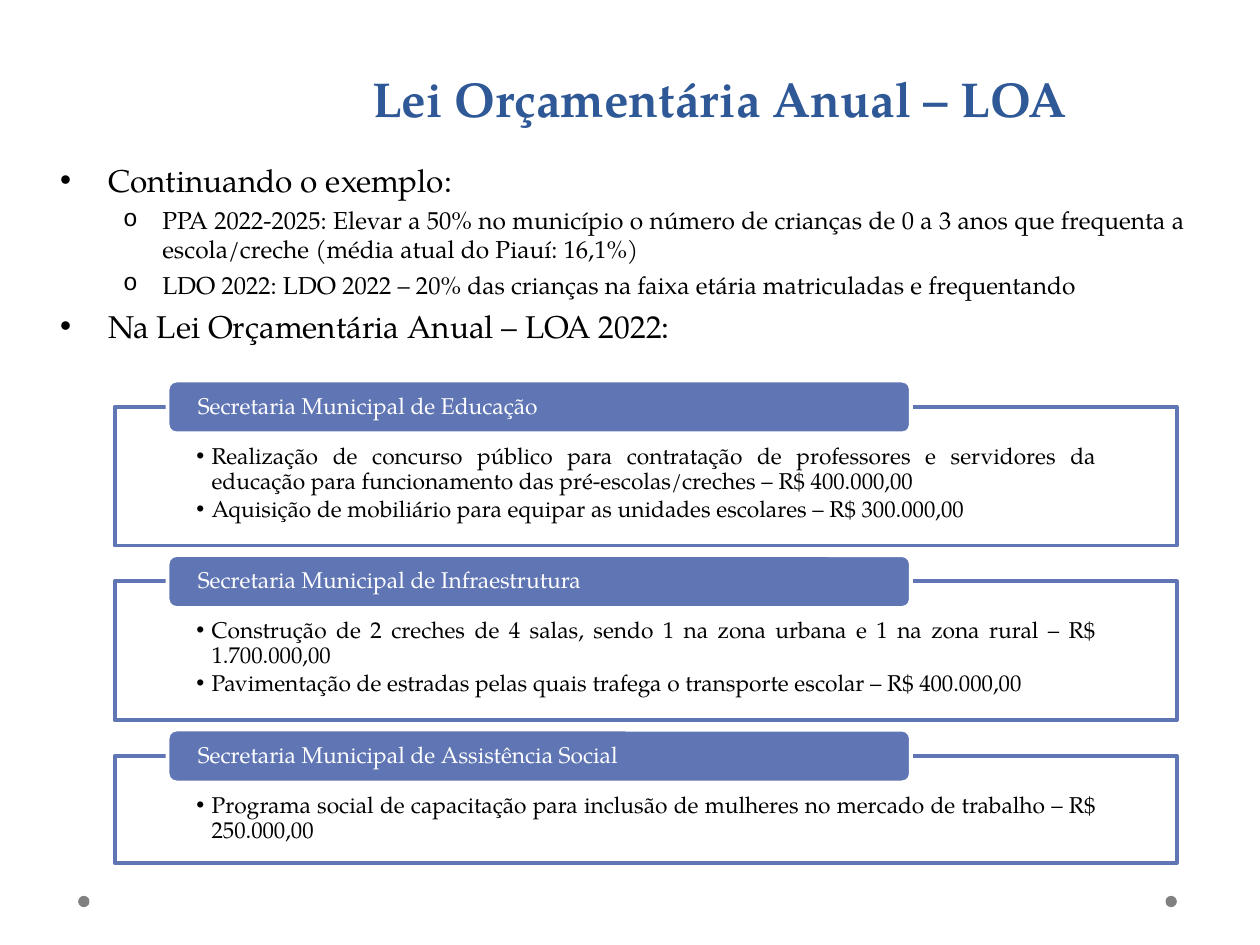
from dataclasses import dataclass

from lxml import etree
from pptx import Presentation
from pptx.dml.color import RGBColor
from pptx.enum.shapes import MSO_SHAPE
from pptx.enum.text import MSO_ANCHOR, PP_ALIGN
from pptx.oxml.ns import qn
from pptx.util import Inches, Pt

RECTANGLE, ROUNDED, OVAL = MSO_SHAPE.RECTANGLE, MSO_SHAPE.ROUNDED_RECTANGLE, MSO_SHAPE.OVAL
TOP, MIDDLE, BOTTOM = MSO_ANCHOR.TOP, MSO_ANCHOR.MIDDLE, MSO_ANCHOR.BOTTOM
CENTER, JUSTIFY = PP_ALIGN.CENTER, PP_ALIGN.JUSTIFY

NAVY = RGBColor(0x2F, 0x58, 0x97)
BLUE = RGBColor(0x60, 0x76, 0xB4)
GRAY = RGBColor(0x80, 0x80, 0x80)
BLACK = RGBColor(0, 0, 0)
WHITE = RGBColor(0xFF, 0xFF, 0xFF)
FONT = "TeX Gyre Pagella"

# The slide is a grid of 100 columns and 75 rows of square cells
CELL = Inches(0.1)
COLUMNS, ROWS = 100, 75


@dataclass(frozen=True)
class Area:
    left: float
    top: float
    width: float
    height: float

    def lengths(self) -> list[int]:
        return [cells(n) for n in (self.left, self.top, self.width, self.height)]


@dataclass(frozen=True)
class Bullet:
    mark: str
    font: str
    margin: float
    hang: float


@dataclass(frozen=True)
class Style:
    size: float
    color: RGBColor = BLACK
    bold: bool = False
    alignment: PP_ALIGN = JUSTIFY
    bullet: Bullet | None = None
    line_spacing: float | Pt | None = None
    before: float = 0
    after: float = 0


@dataclass(frozen=True)
class Department:
    name: str
    actions: list[str]
    height: float


TITLE = Style(28, NAVY, True, CENTER, line_spacing=Pt(58))
TOPIC = Style(18, bullet=Bullet("•", "Arial", 3.8, 3.8), before=4.3)
DETAIL = Style(14, bullet=Bullet("o", "Courier New", 8.1, 3.1), before=3.4)
TAB = Style(13, WHITE, line_spacing=0.9)
ACTION = Style(13, bullet=Bullet("•", "Arial", 1.2, 1.2), line_spacing=0.9, after=2)

OUTLINE = [
    ("Continuando o exemplo:", TOPIC),
    ("PPA 2022-2025: Elevar a 50% no município o número de crianças de 0 a 3 anos "
     "que frequenta a escola/creche (média atual do Piauí: 16,1%)", DETAIL),
    ("LDO 2022: LDO 2022 – 20% das crianças na faixa etária matriculadas e frequentando", DETAIL),
    ("Na Lei Orçamentária Anual – LOA 2022:", TOPIC),
]
DEPARTMENTS = [
    Department("Secretaria Municipal de Educação", [
        "Realização de concurso público para contratação de professores e servidores da "
        "educação para funcionamento das pré-escolas/creches – R$ 400.000,00",
        "Aquisição de mobiliário para equipar as unidades escolares – R$ 300.000,00"], 11),
    Department("Secretaria Municipal de Infraestrutura", [
        "Construção de 2 creches de 4 salas, sendo 1 na zona urbana e 1 na zona rural – "
        "R$ 1.700.000,00",
        "Pavimentação de estradas pelas quais trafega o transporte escolar – R$ 400.000,00"], 11),
    Department("Secretaria Municipal de Assistência Social", [
        "Programa social de capacitação para inclusão de mulheres no mercado de trabalho – "
        "R$ 250.000,00"], 8.5),
]
FIRST_PANEL, PANEL_GAP = 32.3, 2.85
TAB_HEIGHT = 4.2


def cells(count: float) -> int:
    return round(count * CELL)


def add_bullet(para, bullet: Bullet) -> None:
    props = para._p.get_or_add_pPr()
    props.set("marL", str(cells(bullet.margin)))
    props.set("indent", str(-cells(bullet.hang)))
    etree.SubElement(props, qn("a:buFont")).set("typeface", bullet.font)
    etree.SubElement(props, qn("a:buChar")).set("char", bullet.mark)


def write(box, lines: list[tuple[str, Style]], anchor: MSO_ANCHOR,
          insets: tuple[float, float, float, float] = (1, 0.5, 1, 0.5)) -> None:
    frame = box.text_frame
    frame.word_wrap = True
    frame.vertical_anchor = anchor
    for side, inset in zip(("left", "top", "right", "bottom"), insets):
        setattr(frame, f"margin_{side}", cells(inset))
    for index, (text, style) in enumerate(lines):
        para = frame.add_paragraph() if index else frame.paragraphs[0]
        if style.bullet:
            add_bullet(para, style.bullet)
        layout = {"alignment": style.alignment, "line_spacing": style.line_spacing,
                  "space_before": Pt(style.before if index else 0),
                  "space_after": Pt(style.after)}
        for name, value in layout.items():
            setattr(para, name, value)
        span = para.add_run()
        span.text = text
        for name, value in {"name": FONT, "size": Pt(style.size), "bold": style.bold}.items():
            setattr(span.font, name, value)
        span.font.color.rgb = style.color


def add_shape(page, kind: MSO_SHAPE, area: Area, fill: RGBColor, line: RGBColor | None = None):
    shape = page.shapes.add_shape(kind, *area.lengths())
    shape.shadow.inherit = False
    shape.fill.solid()
    shape.fill.fore_color.rgb = fill
    if line is None:
        shape.line.fill.background()
    else:
        shape.line.color.rgb = line
        shape.line.width = Pt(2.25)
    return shape


def add_department(page, department: Department, top: float) -> None:
    panel = add_shape(page, RECTANGLE, Area(9.1, top, 84.3, department.height), WHITE, BLUE)
    color = panel.fill._xPr.find(qn("a:solidFill"))[0]
    etree.SubElement(color, qn("a:alpha")).set("val", "90000")
    write(panel, [(action, ACTION) for action in department.actions], TOP, (6.5, 3, 6.5, 1))
    # The tab straddles the upper edge of its panel
    tab = add_shape(page, ROUNDED, Area(13.3, top - TAB_HEIGHT / 2, 59, TAB_HEIGHT), BLUE, WHITE)
    write(tab, [(department.name, TAB)], MIDDLE, (2.2, 0, 2.2, 0))


def main() -> None:
    deck = Presentation()
    deck.slide_width, deck.slide_height = cells(COLUMNS), cells(ROWS)
    page = deck.slides.add_slide(deck.slide_layouts[6])

    # Corner dots
    for left in (92.5, 6.2):
        add_shape(page, OVAL, Area(left, 71.1, 0.9, 0.9), GRAY)

    # Title and outline
    title = page.shapes.add_textbox(*Area(18.5, 1.3, 77.2, 9.3).lengths())
    write(title, [("Lei Orçamentária Anual – LOA", TITLE)], BOTTOM)
    outline = page.shapes.add_textbox(*Area(3.8, 12.3, 91.3, 16.4).lengths())
    write(outline, OUTLINE, TOP)

    # Departments, stacked with equal gaps
    top = FIRST_PANEL
    for department in DEPARTMENTS:
        add_department(page, department, top)
        top += department.height + PANEL_GAP

    deck.save("out.pptx")


if __name__ == "__main__":
    main()
